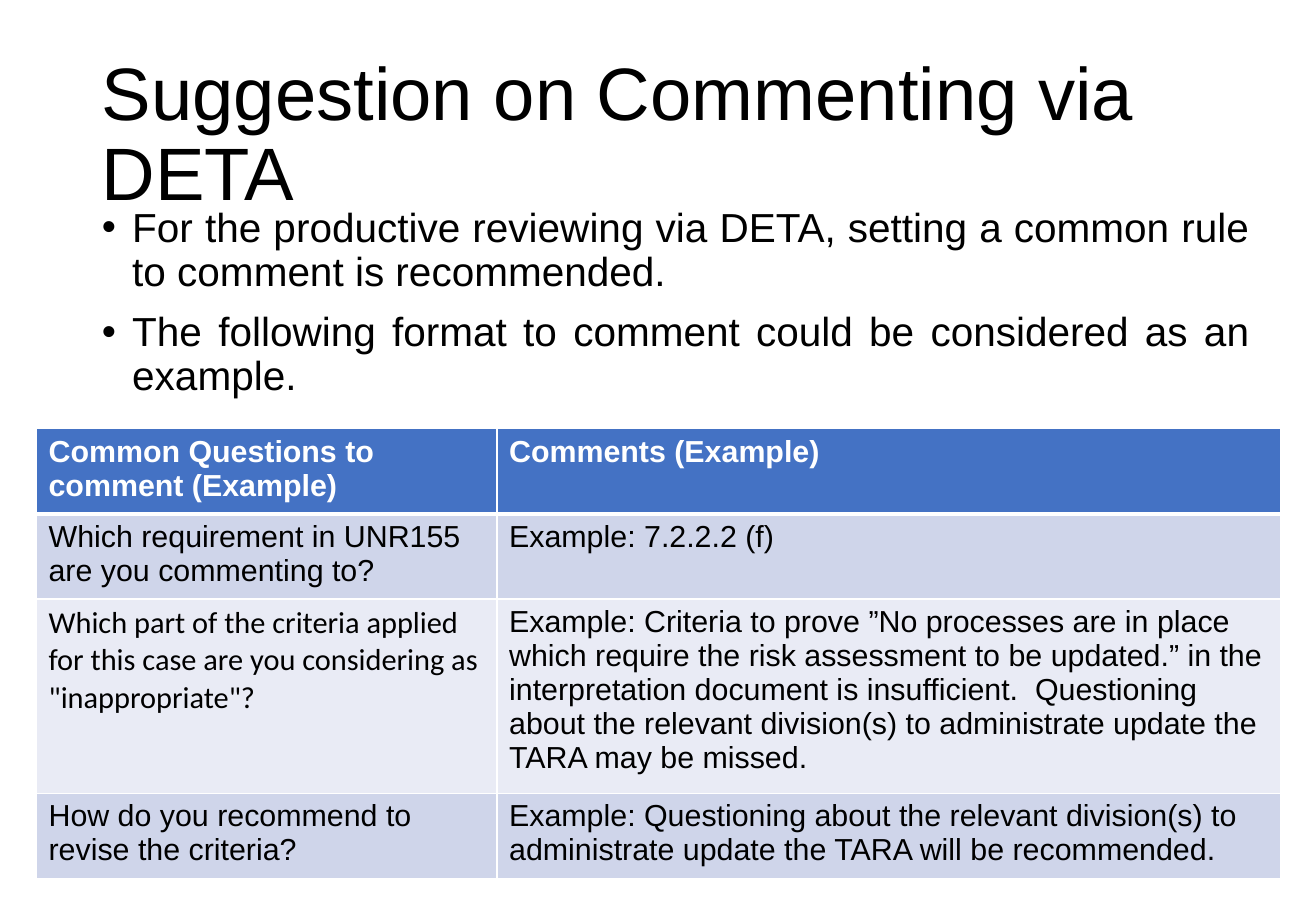
from lxml import etree
from pptx import Presentation
from pptx.dml.color import RGBColor
from pptx.enum.text import MSO_ANCHOR, PP_ALIGN
from pptx.oxml.ns import qn
from pptx.util import Inches, Pt

MIDDLE, TOP = MSO_ANCHOR.MIDDLE, MSO_ANCHOR.TOP
LEFT, JUSTIFY = PP_ALIGN.LEFT, PP_ALIGN.JUSTIFY

BLACK, WHITE = "000000", "FFFFFF"
HEADER_FILL = "4472C4"
BAND_FILLS = ["CFD5EA", "E9EBF5"]

TITLE = "Suggestion on Commenting via DETA"
BULLETS = [
    "For the productive reviewing via DETA, setting a common rule to comment is recommended.",
    "The following format to comment could be considered as an example.",
]
TABLE_ROWS = [
    ("Common Questions to comment (Example)", "Comments (Example)"),
    ("Which requirement in UNR155 are you commenting to?", "Example: 7.2.2.2 (f)"),
    (
        'Which part of the criteria applied for this case are you considering as "inappropriate"?',
        "Example: Criteria to prove ”No processes are in place which require the risk "
        "assessment to be updated.” in the interpretation document is insufficient.  "
        "Questioning about the relevant division(s) to administrate update the TARA "
        "may be missed.",
    ),
    (
        "How do you recommend to revise the criteria?",
        "Example: Questioning about the relevant division(s) to administrate update "
        "the TARA will be recommended.",
    ),
]
COLUMN_WIDTHS = [3.79, 6.45]
ROW_HEIGHTS = [0.64, 0.64, 1.49, 0.64]
CALIBRI_CELL = (2, 0)


def color(hex_string):
    return RGBColor.from_string(hex_string)


def set_attributes(target, values):
    for name, value in values.items():
        setattr(target, name, value)


def write_paragraph(paragraph, text, size, font_color=BLACK, font="Arial", bold=False, **layout):
    """Fill a paragraph with one run; layout holds paragraph attributes."""
    set_attributes(paragraph, layout)
    run = paragraph.add_run()
    run.text = text
    set_attributes(run.font, {"size": Pt(size), "name": font, "bold": bold})
    run.font.color.rgb = color(font_color)


def add_bullet(paragraph):
    properties = paragraph._p.get_or_add_pPr()
    properties.set("marL", str(Inches(0.25)))
    properties.set("indent", str(Inches(-0.25)))
    etree.SubElement(properties, qn("a:buFont"), typeface="Arial")
    etree.SubElement(properties, qn("a:buChar"), char="•")


def add_text_box(slide, position, anchor):
    shape = slide.shapes.add_textbox(*map(Inches, position))
    set_attributes(shape.text_frame, {"word_wrap": True, "vertical_anchor": anchor})
    return shape.text_frame


def add_title(slide):
    frame = add_text_box(slide, (0.74, 0.4, 9.56, 1.45), MIDDLE)
    write_paragraph(frame.paragraphs[0], TITLE, 44, alignment=LEFT, line_spacing=0.9)


def add_bullet_list(slide):
    frame = add_text_box(slide, (0.74, 1.66, 9.64, 1.54), TOP)
    for index, text in enumerate(BULLETS):
        paragraph = frame.add_paragraph() if index else frame.paragraphs[0]
        write_paragraph(paragraph, text, 24, alignment=JUSTIFY,
                        line_spacing=0.9, space_before=Pt(10))
        add_bullet(paragraph)


def add_cell_borders(cell, widths):
    """Draw white borders; widths maps an edge tag to points, in schema order."""
    properties = cell._tc.get_or_add_tcPr()
    for edge, width in widths.items():
        line = etree.SubElement(properties, qn(f"a:{edge}"), w=str(Pt(width)))
        fill = etree.SubElement(line, qn("a:solidFill"))
        etree.SubElement(fill, qn("a:srgbClr"), val=WHITE)


def format_cell(cell, row, column, text):
    is_header = row == 0
    add_cell_borders(cell, {"lnL": 1, "lnR": 1,
                            "lnT": 3 if row == 1 else 1,
                            "lnB": 3 if is_header else 1})
    cell.fill.solid()
    cell.fill.fore_color.rgb = color(HEADER_FILL if is_header else BAND_FILLS[(row - 1) % 2])
    write_paragraph(cell.text_frame.paragraphs[0], text, 18,
                    font_color=WHITE if is_header else BLACK,
                    font="Calibri" if (row, column) == CALIBRI_CELL else "Arial",
                    bold=is_header)


def add_comment_table(slide):
    table = slide.shapes.add_table(
        len(TABLE_ROWS), len(COLUMN_WIDTHS), Inches(0.3), Inches(3.53),
        Inches(sum(COLUMN_WIDTHS)), Inches(sum(ROW_HEIGHTS))).table
    for column, width in zip(table.columns, COLUMN_WIDTHS):
        column.width = Inches(width)
    for row, height in zip(table.rows, ROW_HEIGHTS):
        row.height = Inches(height)
    for row, texts in enumerate(TABLE_ROWS):
        for column, text in enumerate(texts):
            format_cell(table.cell(row, column), row, column, text)


def main():
    presentation = Presentation()
    set_attributes(presentation, {"slide_width": Inches(10.83), "slide_height": Inches(7.5)})
    slide = presentation.slides.add_slide(presentation.slide_layouts[6])
    add_title(slide)
    add_bullet_list(slide)
    add_comment_table(slide)
    presentation.save("out.pptx")


if __name__ == "__main__":
    main()
